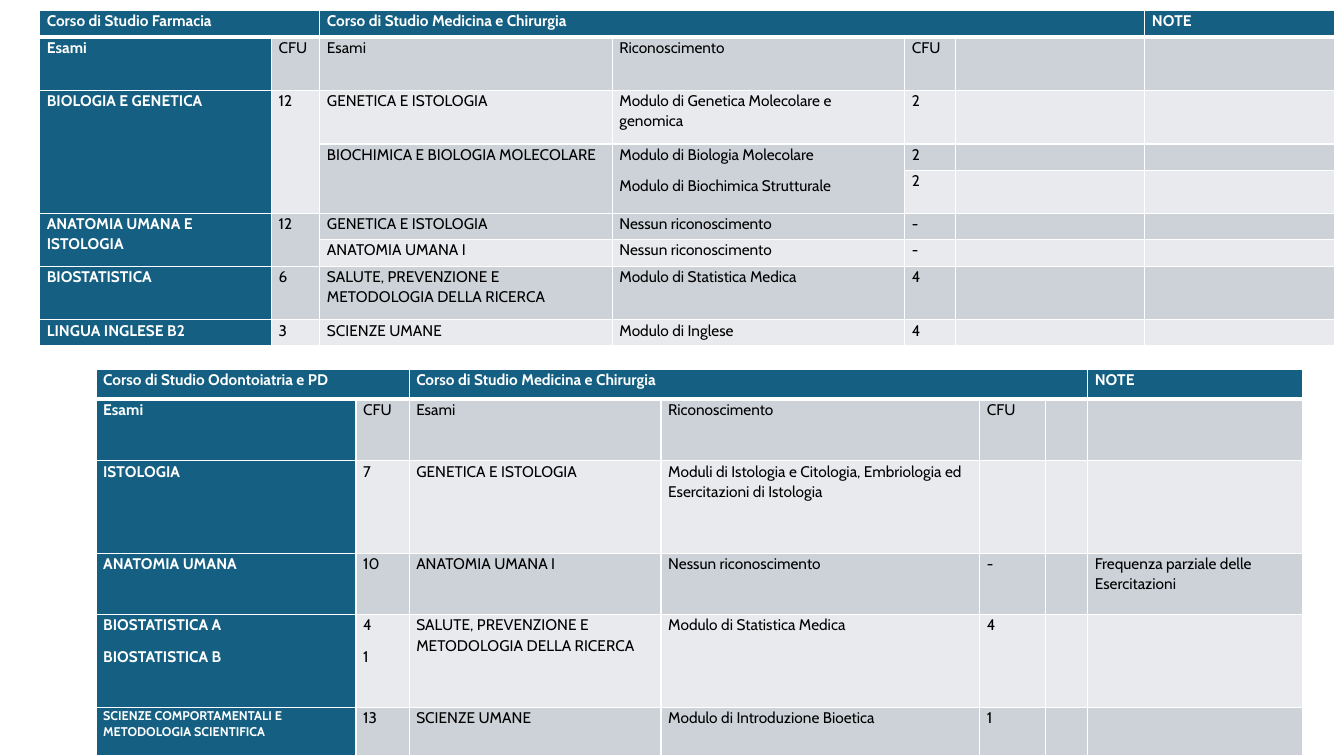
from lxml.etree import SubElement
from pptx import Presentation
from pptx.dml.color import RGBColor as RGB
from pptx.oxml.ns import qn
from pptx.util import Cm, Pt

COLORS = {"head": "156082", "dark": "CCD2D8", "light": "E8EAED",
          "white": "FFFFFF", "black": "000000"}
HEADER_SPANS = [(0, 0, 0, 1), (0, 2, 0, 5)]
SUBHEAD = ["Esami", "CFU", "Esami", "Riconoscimento", "CFU"]
MEDICINA = "Corso di Studio Medicina e Chirurgia"
SALUTE = "SALUTE, PREVENZIONE E METODOLOGIA DELLA RICERCA"

ODONTOIATRIA = [
    ["Corso di Studio Odontoiatria e PD", "", MEDICINA, "", "", "", "NOTE"],
    SUBHEAD,
    ["ISTOLOGIA", "7", "GENETICA E ISTOLOGIA",
     "Moduli di Istologia e Citologia, Embriologia ed Esercitazioni di Istologia"],
    ["ANATOMIA UMANA", "10", "ANATOMIA UMANA I", "Nessun riconoscimento", "-", "",
     "Frequenza parziale delle Esercitazioni"],
    ["BIOSTATISTICA A\nBIOSTATISTICA B", "4\n1", SALUTE, "Modulo di Statistica Medica", "4"],
    ["SCIENZE COMPORTAMENTALI E METODOLOGIA SCIENTIFICA", "13", "SCIENZE UMANE",
     "Modulo di Introduzione Bioetica", "1"],
]
FARMACIA = [
    ["Corso di Studio Farmacia", "", MEDICINA, "", "", "", "NOTE"],
    SUBHEAD,
    ["BIOLOGIA E GENETICA", "12", "GENETICA E ISTOLOGIA",
     "Modulo di Genetica Molecolare e genomica", "2"],
    ["", "", "BIOCHIMICA E BIOLOGIA MOLECOLARE",
     "Modulo di Biologia Molecolare\nModulo di Biochimica Strutturale", "2"],
    ["", "", "", "", "2"],
    ["ANATOMIA UMANA E ISTOLOGIA", "12", "GENETICA E ISTOLOGIA",
     "Nessun riconoscimento", "-"],
    ["", "", "ANATOMIA UMANA I", "Nessun riconoscimento", "-"],
    ["BIOSTATISTICA", "6", SALUTE, "Modulo di Statistica Medica", "4"],
    ["LINGUA INGLESE B2", "3", "SCIENZE UMANE", "Modulo di Inglese", "4"],
]
# first row, first column, last row, last column
FARMACIA_SPANS = [(2, 0, 4, 0), (2, 1, 4, 1), (3, 2, 4, 2), (3, 3, 4, 3),
                  (5, 0, 6, 0), (5, 1, 6, 1)]


class ExamSlide:
    font, size, small = "Cabin", 11, 9

    def __init__(self, prs):
        self.s = prs.slides.add_slide(prs.slide_layouts[6])

    def table(self, left, top, widths, heights, rows, spans=(), small_cells=()):
        frame = self.s.shapes.add_table(len(heights), len(widths), Cm(left), Cm(top),
                                        Cm(sum(widths)), Cm(sum(heights)))
        tbl = frame.table
        for col, width in zip(tbl.columns, widths):
            col.width = Cm(width)
        for row, height in zip(tbl.rows, heights):
            row.height = Cm(height)
        for r1, c1, r2, c2 in [*HEADER_SPANS, *spans]:
            tbl.cell(r1, c1).merge(tbl.cell(r2, c2))
        for i, texts in enumerate(rows):
            for j in range(len(widths)):
                text = texts[j] if j < len(texts) else ""
                size = self.small if (i, j) in small_cells else self.size
                self.cell(tbl.cell(i, j), text, i, j, size)

    def cell(self, cell, text, i, j, size):
        head = i == 0 or j == 0
        fill = "head" if head else "dark" if i % 2 else "light"
        self.borders(cell, i)
        cell.fill.solid()
        cell.fill.fore_color.rgb = RGB.from_string(COLORS[fill])
        margins = {"margin_left": 0.18, "margin_right": 0.18,
                   "margin_top": 0, "margin_bottom": 0}
        for name, value in margins.items():
            setattr(cell, name, Cm(value))
        cell.text = text
        for p in cell.text_frame.paragraphs:
            p.line_spacing, p.space_after = 1.07, Pt(8)
            for r in p.runs:
                for name, value in {"name": self.font, "size": Pt(size), "bold": head}.items():
                    setattr(r.font, name, value)
                r.font.color.rgb = RGB.from_string(COLORS["white" if head else "black"])
            if not p.runs:
                SubElement(p._p, qn("a:endParaRPr"), sz=str(size * 100))

    def borders(self, cell, i):
        """White cell lines, with a thicker one under the header row."""
        weights = {"L": 1, "R": 1, "T": 3 if i == 1 else 1, "B": 3 if i == 0 else 1}
        tcPr = cell._tc.get_or_add_tcPr()
        for side, weight in weights.items():
            ln = SubElement(tcPr, qn(f"a:ln{side}"), w=str(Pt(weight)))
            solid = SubElement(ln, qn("a:solidFill"))
            SubElement(solid, qn("a:srgbClr"), val=COLORS["white"])


def main():
    prs = Presentation()
    prs.slide_width, prs.slide_height = Cm(33.87), Cm(19.05)
    slide = ExamSlide(prs)
    slide.table(2.42, 9.3, [6.55, 1.34, 6.35, 8.03, 1.65, 1.07, 5.41],
                [0.76, 1.55, 2.33, 1.55, 2.33, 1.23], ODONTOIATRIA, small_cells=[(5, 0)])
    slide.table(1, 0.27, [5.84, 1.22, 7.37, 7.37, 1.27, 4.78, 4.78],
                [0.66, 1.35, 1.35, 0.66, 1.08, 0.66, 0.68, 1.35, 0.66],
                FARMACIA, FARMACIA_SPANS)
    prs.save("out.pptx")


if __name__ == "__main__":
    main()
